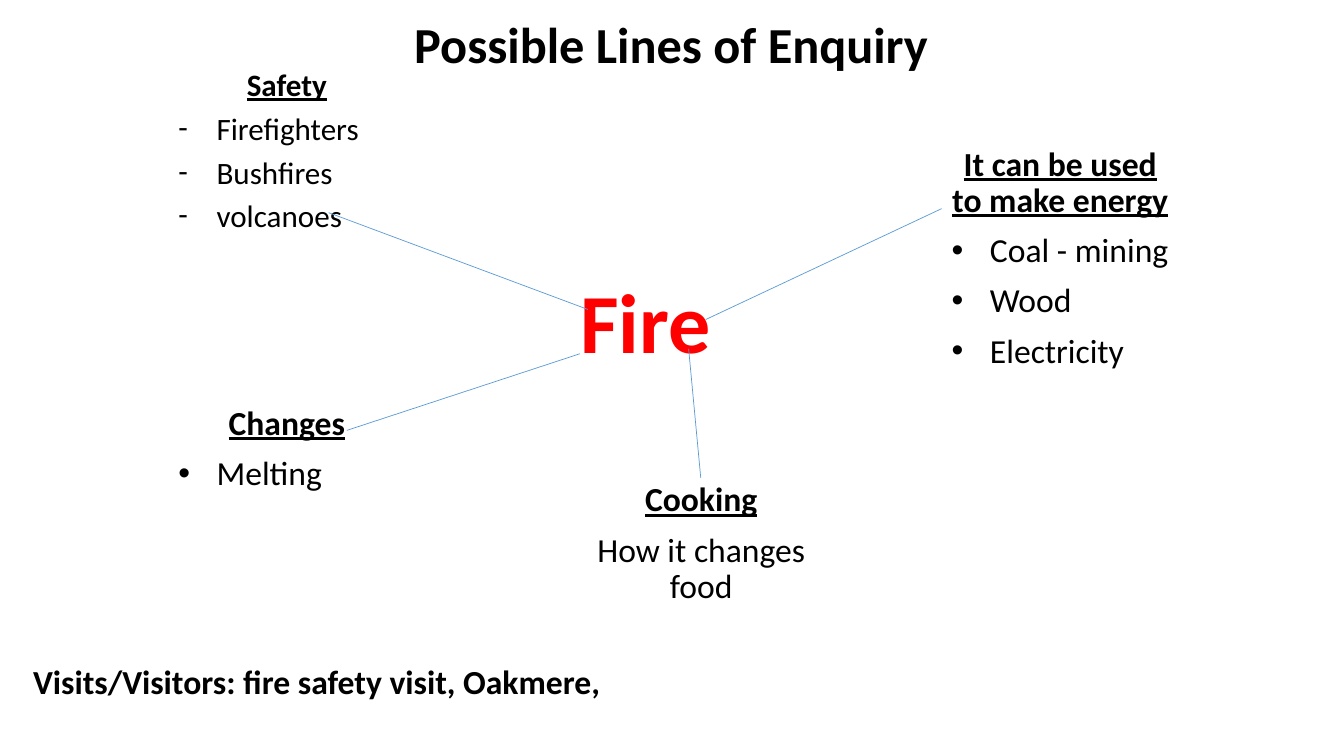
from lxml import etree
from pptx import Presentation
from pptx.dml.color import RGBColor
from pptx.enum.shapes import MSO_CONNECTOR
from pptx.enum.text import MSO_ANCHOR, MSO_AUTO_SIZE, PP_ALIGN
from pptx.oxml.ns import qn
from pptx.util import Inches, Pt

LEFT, CENTER = PP_ALIGN.LEFT, PP_ALIGN.CENTER
TOP, BOTTOM = MSO_ANCHOR.TOP, MSO_ANCHOR.BOTTOM
STRAIGHT = MSO_CONNECTOR.STRAIGHT
NO_AUTOFIT = MSO_AUTO_SIZE.NONE

FONT = "Calibri"
BLACK, RED, BLUE = "000000", "FF0000", "5B9BD5"
BULLET_INDENT = 0.38

TOPIC = ("Fire", (3.26, 2.72, 6.28, 1.02))
BANNERS = [
    ("Possible Lines of Enquiry", (4.01, 0.15, 8.98, 0.61), 36),
    ("Visits/Visitors: fire safety visit, Oakmere,", (0.23, 6.55, 8.98, 0.61), 24),
]
# heading, lines below it, bullet, box, text size, line spacing
BRANCHES = [
    ("Changes", ["Melting"], "•", (1.67, 3.98, 2.35, 1.07), 24, 0.9),
    ("It can be used to make energy", ["Coal - mining", "Wood", "Electricity"],
     "•", (9.34, 1.41, 2.35, 2.33), 24, 0.9),
    ("Safety", ["Firefighters", "Bushfires", "volcanoes"],
     "-", (1.67, 0.67, 2.35, 1.81), 22.2, 0.8),
    ("Cooking", ["How it changes food"], None, (5.59, 4.74, 2.73, 1.33), 24, 0.9),
]
SPOKES = [
    ((7, 3.17), (9.34, 2.07)),
    ((3.26, 2.11), (5.83, 3.07)),
    ((3.44, 4.27), (5.75, 3.51)),
    ((6.83, 3.46), (6.95, 4.74)),
]


def color(hex_code):
    return RGBColor.from_string(hex_code)


def inches(values):
    return [Inches(value) for value in values]


def write(para, text, size, bold=True, underline=False, ink=BLACK,
          align=LEFT, spacing=0.9, before=10):
    para.alignment = align
    para.line_spacing = spacing
    para.space_before = Pt(before)
    span = para.add_run()
    span.text = text
    font = span.font
    font.name, font.size = FONT, Pt(size)
    font.bold, font.underline = bold, underline
    font.color.rgb = color(ink)


def add_bullet(para, mark):
    properties = para._p.get_or_add_pPr()
    properties.set("marL", str(Inches(BULLET_INDENT)))
    properties.set("indent", str(-Inches(BULLET_INDENT)))
    typeface = "Arial" if mark == "•" else FONT
    etree.SubElement(properties, qn("a:buFont")).set("typeface", typeface)
    etree.SubElement(properties, qn("a:buChar")).set("char", mark)


def add_frame(slide, place):
    frame = slide.shapes.add_textbox(*inches(place)).text_frame
    frame.word_wrap = True
    frame.vertical_anchor = TOP
    return frame


def add_branch(slide, heading, lines, mark, place, size, spacing):
    frame = add_frame(slide, place)
    write(frame.paragraphs[0], heading, size, underline=True,
          align=CENTER, spacing=spacing)
    for line in lines:
        para = frame.add_paragraph()
        write(para, line, size, bold=False, spacing=spacing,
              align=LEFT if mark else CENTER)
        if mark:
            add_bullet(para, mark)


def add_spoke(slide, start, end):
    spoke = slide.shapes.add_connector(STRAIGHT, *inches(start + end))
    spoke.line.color.rgb = color(BLUE)
    spoke.line.width = Pt(0.5)
    etree.SubElement(spoke._element.spPr, qn("a:effectLst"))


def add_topic(slide, text, place):
    title = slide.shapes.title
    title.left, title.top, title.width, title.height = inches(place)
    frame = title.text_frame
    frame.word_wrap = True
    frame.auto_size = NO_AUTOFIT
    frame.vertical_anchor = BOTTOM
    write(frame.paragraphs[0], text, 60, ink=RED, align=CENTER, before=0)


def main():
    deck = Presentation()
    deck.slide_width, deck.slide_height = Inches(13.33), Inches(7.5)
    slide = deck.slides.add_slide(deck.slide_layouts.get_by_name("Title Only"))
    add_topic(slide, *TOPIC)
    for branch in BRANCHES:
        add_branch(slide, *branch)
    for start, end in SPOKES:
        add_spoke(slide, start, end)
    for text, place, size in BANNERS:
        write(add_frame(slide, place).paragraphs[0], text, size)
    deck.save("out.pptx")


if __name__ == "__main__":
    main()
